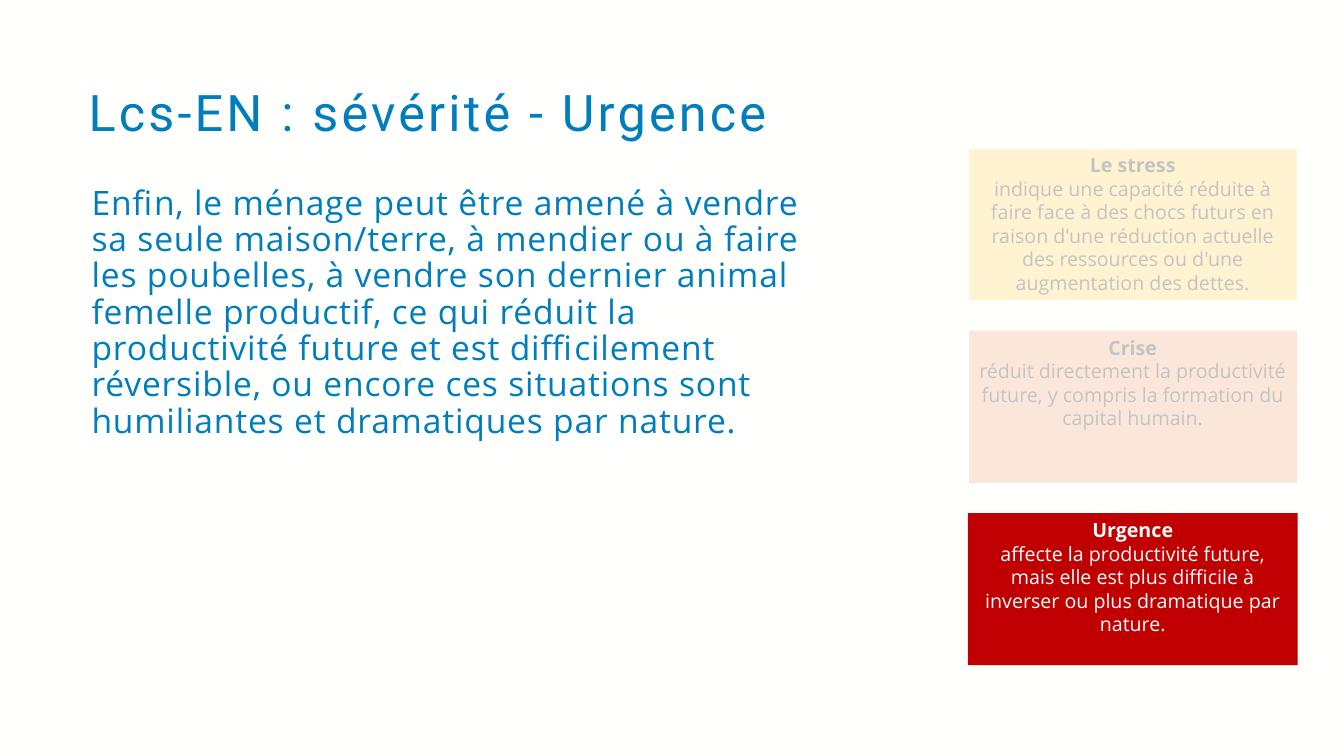
from pptx import Presentation
from pptx.dml.color import RGBColor
from pptx.enum.shapes import MSO_SHAPE
from pptx.enum.text import MSO_ANCHOR, PP_ALIGN
from pptx.oxml.ns import qn
from pptx.util import Inches, Pt
from lxml.etree import SubElement

HUES = {"back": "FFFFFE", "blue": "007DBC", "gold": "FFD966", "peach": "F4B183",
        "red": "C00000", "dark": "3B3838", "white": "FFFFFF"}


def hue(name):
    return RGBColor.from_string(HUES[name])


class Deck:
    def __init__(self):
        self.prs = Presentation()
        self.prs.slide_width = Inches(13.33)
        self.prs.slide_height = Inches(7.5)
        self.slide = self.prs.slides.add_slide(self.prs.slide_layouts[6])
        fill = self.slide.background.fill
        fill.solid()
        fill.fore_color.rgb = hue("back")

    def run(self, para, text, size, font, color, bold=False, gap=0):
        run = para.add_run()
        run.text = text
        run.font.size = Pt(size)
        run.font.name = font
        run.font.bold = bold
        run.font.color.rgb = hue(color)
        if gap:
            run.font._element.set("spc", str(round(gap * 100)))

    def text(self, box, words, size, font, gap, anchor):
        frame = self.slide.shapes.add_textbox(*map(Inches, box)).text_frame
        frame.word_wrap = True
        frame.vertical_anchor = anchor
        para = frame.paragraphs[0]
        para.line_spacing = 0.9
        self.run(para, words, size, font, "blue", gap=gap)

    def rect(self, box, color):
        shape = self.slide.shapes.add_shape(MSO_SHAPE.RECTANGLE, *map(Inches, box))
        shape.shadow.inherit = False
        shape.fill.solid()
        shape.fill.fore_color.rgb = hue(color)
        shape.line.fill.background()
        return shape

    def card(self, box, color, ink, head, body):
        frame = self.rect(box, color).text_frame
        frame.word_wrap = True
        frame.vertical_anchor = MSO_ANCHOR.TOP
        for part, bold in ((head, True), (body, False)):
            para = frame.paragraphs[0] if bold else frame.add_paragraph()
            para.alignment = PP_ALIGN.CENTER
            self.run(para, part, 14, "Open Sans", ink, bold)

    def veil(self, box):
        shape = self.rect(box, "white")
        shape.line.color.rgb = hue("white")
        shape.line.width = Pt(1)
        tint = shape.fill._xPr.find(qn("a:solidFill"))[0]
        SubElement(tint, qn("a:alpha")).set("val", "70000")


def main():
    deck = Deck()

    # Title and main text
    deck.text((0.78, 0.78, 12.09, 0.72), "Lcs-EN : sévérité - Urgence",
              36, "Roboto", 2.3, MSO_ANCHOR.MIDDLE)
    deck.text((0.81, 1.8, 7.62, 4.27),
              "Enfin, le ménage peut être amené à vendre sa seule maison/terre, "
              "à mendier ou à faire les poubelles, à vendre son dernier animal "
              "femelle productif, ce qui réduit la productivité future et est "
              "difficilement réversible, ou encore ces situations sont "
              "humiliantes et dramatiques par nature.",
              24, "Open Sans", 0.6, MSO_ANCHOR.TOP)

    # Severity cards
    left, top, wide, high, step = 9.6, 1.47, 3.27, 1.51, 1.81
    cards = [
        ("gold", "dark", "Le stress",
         "indique une capacité réduite à faire face à des chocs futurs en raison "
         "d'une réduction actuelle des ressources ou d'une augmentation des dettes."),
        ("peach", "dark", "Crise",
         "réduit directement la productivité future, y compris la formation "
         "du capital humain."),
        ("red", "white", "Urgence",
         "affecte la productivité future, mais elle est plus difficile à inverser "
         "ou plus dramatique par nature."),
    ]
    for i, (color, ink, head, body) in enumerate(cards):
        deck.card((left, top + i * step, wide, high), color, ink, head, body)

    # Pale veils over the first two cards
    for y in (1.47, 3.25):
        deck.veil((left, y, wide, 1.57))

    deck.prs.save("out.pptx")


if __name__ == "__main__":
    main()
